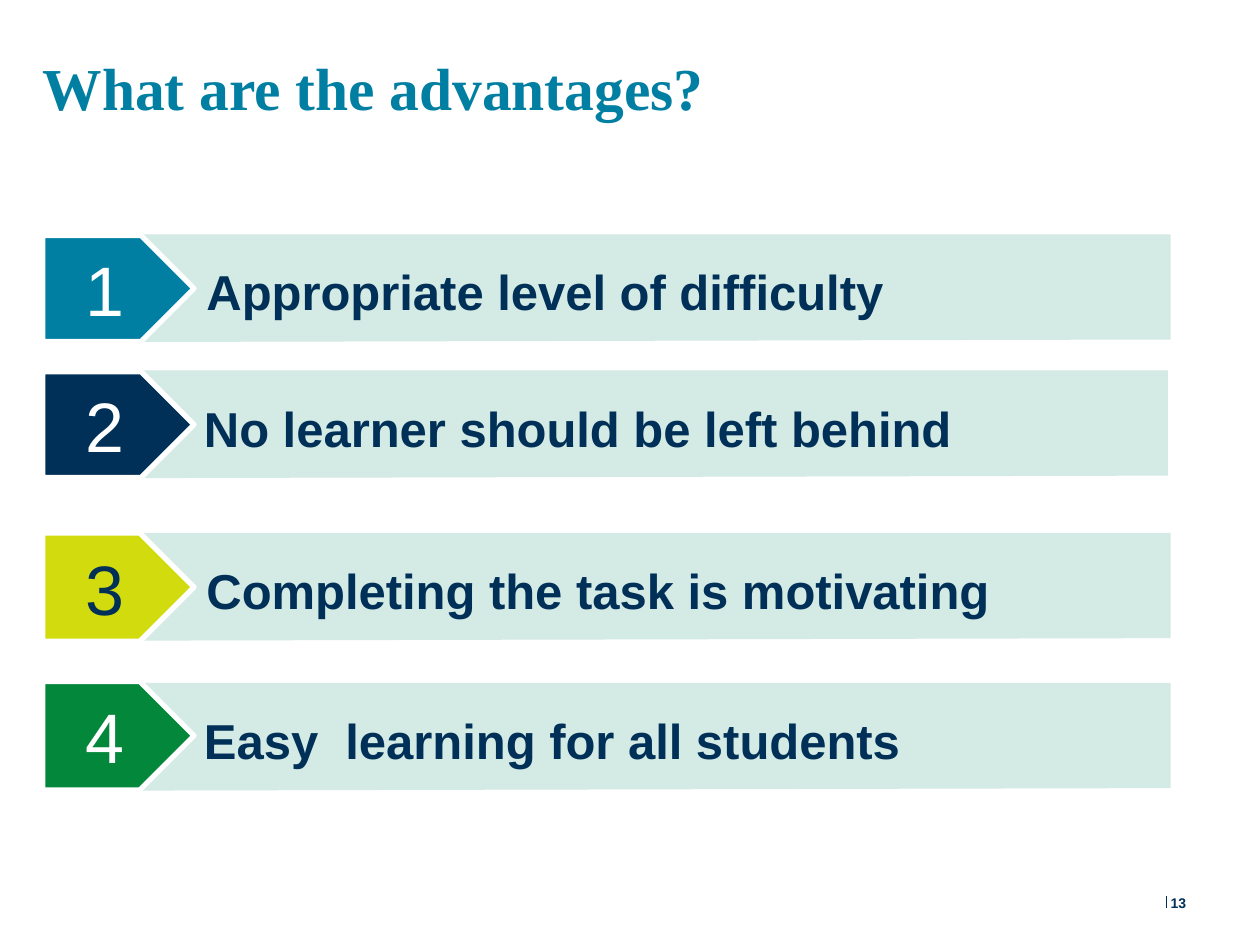
from lxml.etree import SubElement
from pptx import Presentation
from pptx.dml.color import RGBColor
from pptx.enum.shapes import MSO_CONNECTOR as CONN, MSO_SHAPE as SHAPE
from pptx.enum.text import MSO_ANCHOR as ANCHOR, MSO_AUTO_SIZE as FIT, PP_ALIGN as ALIGN
from pptx.oxml.ns import qn
from pptx.util import Inches, Pt

COLS, ROWS = 100, 75  # grid cells across and down the slide
NAVY, TEAL, LIME, GREEN = "003057", "007FA3", "D2DB0E", "03873A"
MINT, WHITE = "D4EAE4", "FFFFFF"


def rgb(code):
    return RGBColor.from_string(code)


class Deck:
    """Style and current slide; lengths are grid columns and rows."""

    body_font, title_font = "Arial", "Times New Roman"

    def __init__(self, prs):
        self.cell_w = prs.slide_width / COLS
        self.cell_h = prs.slide_height / ROWS
        self.slide = prs.slides.add_slide(prs.slide_layouts[5])

    def x(self, cols):
        return round(cols * self.cell_w)

    def y(self, rows):
        return round(rows * self.cell_h)

    def box(self, left, top, width, height):
        return self.x(left), self.y(top), self.x(width), self.y(height)

    def fill_text(self, sp, text, size, color, bold=False, font=None,
                  align=ALIGN.LEFT, anchor=ANCHOR.TOP, inset=True, fit=FIT.NONE):
        tf = sp.text_frame
        tf.word_wrap = True
        tf.auto_size = fit
        tf.vertical_anchor = anchor
        if not inset:
            tf.margin_left = tf.margin_top = tf.margin_right = tf.margin_bottom = 0
        p = tf.paragraphs[0]
        p.alignment = align
        r = p.add_run()
        r.text = text
        r.font.name = font or self.body_font
        r.font.size = Pt(size)
        r.font.bold = bold
        r.font.color.rgb = rgb(color)
        return p

    def title(self, text, *place):
        sp = self.slide.shapes.title
        sp.left, sp.top, sp.width, sp.height = self.box(*place)
        p = self.fill_text(sp, text, 34, TEAL, True, self.title_font,
                           anchor=ANCHOR.MIDDLE, inset=False)
        p.line_spacing = 1.18

    def text(self, shapes, text, place, size, **style):
        sp = shapes.add_textbox(*self.box(*place))
        self.fill_text(sp, text, size, NAVY, bold=True, **style)

    def line(self, x1, y1, x2, y2):
        s = self.slide.shapes.add_connector(
            CONN.STRAIGHT, self.x(x1), self.y(y1), self.x(x2), self.y(y2))
        s.line.color.rgb = rgb(NAVY)
        s.line.width = Pt(0.75)
        SubElement(s._element.spPr, qn("a:effectLst"))

    def band(self, shapes, top, right):
        """Pale bar with a notch on the left and a slightly sloping foot."""
        points = [(right, top + 8.35), (9.7, top + 8.55), (13.7, top + 4.35),
                  (9.4, top), (right, top)]
        (x0, y0), *rest = [(self.x(c), self.y(r)) for c, r in points]
        builder = shapes.build_freeform(x0, y0)
        builder.add_line_segments(rest, close=True)
        s = builder.convert_to_shape()
        s.shadow.inherit = False
        s.fill.solid()
        s.fill.fore_color.rgb = rgb(MINT)
        s.line.fill.background()

    def marker(self, shapes, number, place, fill, color):
        s = shapes.add_shape(SHAPE.PENTAGON, *self.box(*place))
        s.shadow.inherit = False
        s.fill.solid()
        s.fill.fore_color.rgb = rgb(fill)
        s.line.color.rgb = rgb(WHITE)
        s.line.width = Pt(3)
        self.fill_text(s, str(number), 40, color, align=ALIGN.CENTER, anchor=ANCHOR.MIDDLE)

    def advantage(self, number, text, top, right, tag_top, tag_height, indent, fill, color):
        shapes = self.slide.shapes.add_group_shape().shapes
        self.band(shapes, top, right)
        self.marker(shapes, number, (3.4, tag_top, 12, tag_height), fill, color)
        self.text(shapes, text, (indent, top + 1.7, 77.5, 5.7), 28, fit=FIT.SHAPE_TO_FIT_TEXT)


# text, band top, band right, marker top, marker height, text left, marker fill, number colour
ADVANTAGES = [
    ("Appropriate level of difficulty", 18.6, 92.9, 18.7, 8.4, 15.4, TEAL, WHITE),
    ("No learner should be left behind", 29.4, 92.7, 29.5, 8.4, 15.2, NAVY, WHITE),
    ("Completing the task is motivating", 42.3, 92.9, 42.3, 8.6, 15.4, LIME, NAVY),
    ("Easy  learning for all students", 54.2, 92.9, 54.1, 8.6, 15.2, GREEN, WHITE),
]


def main():
    prs = Presentation()
    prs.slide_width, prs.slide_height = Inches(10), Inches(7.5)
    deck = Deck(prs)

    # Page number with its rule
    deck.line(92.6, 71.1, 92.6, 72.1)
    deck.text(deck.slide.shapes, "13", (92.9, 71, 4.7, 1.4), 8,
              anchor=ANCHOR.MIDDLE, inset=False)

    # Heading
    deck.title("What are the advantages?", 3.4, 2.8, 91.3, 7.2)

    # Numbered advantages
    for number, row in enumerate(ADVANTAGES, 1):
        deck.advantage(number, *row)

    prs.save("out.pptx")


if __name__ == "__main__":
    main()
